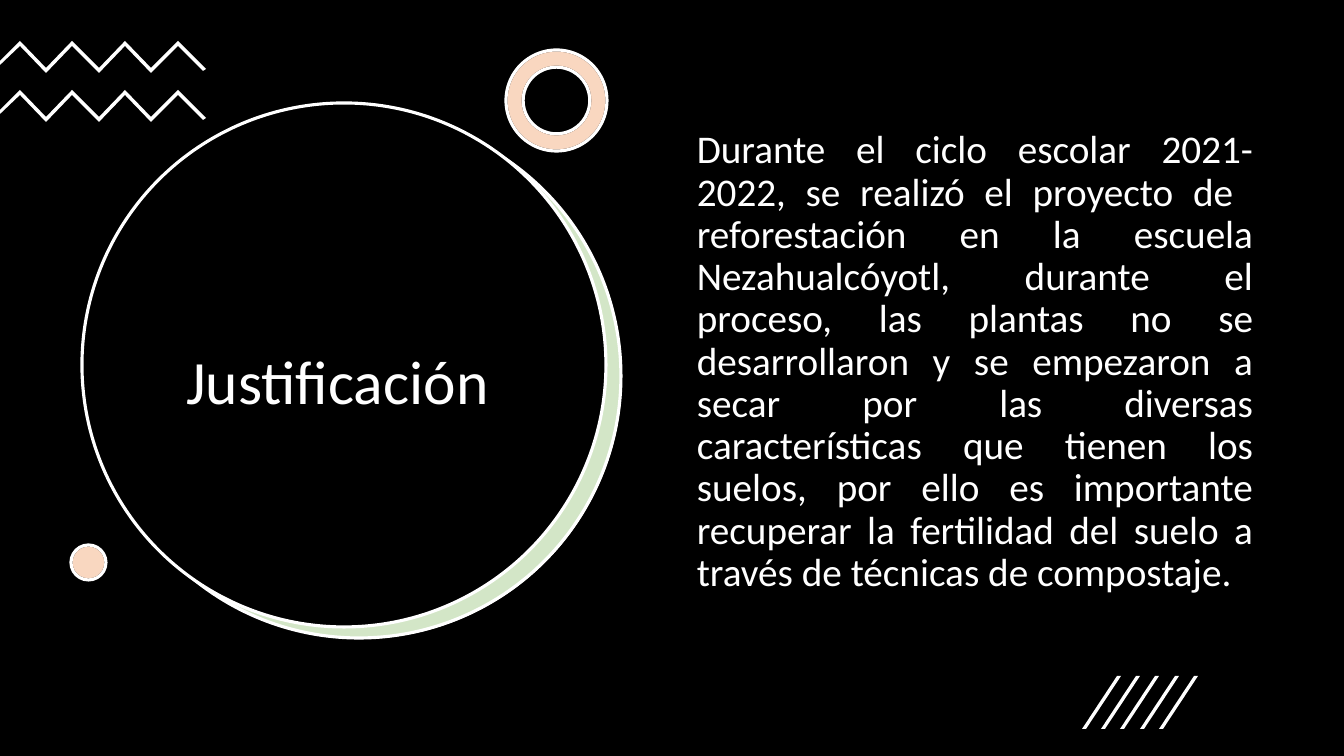
from lxml.etree import SubElement
from pptx import Presentation
from pptx.dml.color import RGBColor
from pptx.enum.shapes import MSO_SHAPE
from pptx.enum.text import MSO_ANCHOR, MSO_AUTO_SIZE, PP_ALIGN
from pptx.oxml.ns import qn
from pptx.util import Emu, Pt

COLORS = {"black": "000000", "white": "FFFFFF", "green": "70AD47", "orange": "ED7D31"}
EMU_PER_PX = 914400 / 100.8
WIDTH, HEIGHT = 1344, 756


def px(length):
    """Turn pixels into EMU."""
    return Emu(round(length * EMU_PER_PX))


class SlidePainter:
    """Hold the style and the current slide."""

    font = "Calibri"
    outline = Pt(2.25)
    line_spacing = 0.9

    def __init__(self, slide):
        """Keep the slide to draw on."""
        self.slide = slide

    def paint(self, shape, fill, line=None, opacity=None):
        """Set the fill, the outline and the opacity of a shape."""
        shape.shadow.inherit = False
        shape.fill.solid()
        shape.fill.fore_color.rgb = RGBColor.from_string(COLORS[fill])
        if opacity:
            color = shape.fill._xPr.find(qn("a:solidFill"))[0]
            SubElement(color, qn("a:alpha"), val=str(opacity * 1000))
        if line:
            shape.line.color.rgb = RGBColor.from_string(COLORS[line])
            shape.line.width = self.outline
        else:
            shape.line.fill.background()

    def preset(self, kind, bounds, fill, line=None, opacity=None, adjustment=None):
        """Add a preset shape."""
        shape = self.slide.shapes.add_shape(kind, *map(px, bounds))
        if adjustment:
            shape.adjustments[0] = adjustment
        self.paint(shape, fill, line, opacity)

    def tinted(self, kind, bounds, tint, adjustment=None):
        """Add a white shape under a translucent one."""
        self.preset(kind, bounds, "white", "black", adjustment=adjustment)
        self.preset(kind, bounds, tint, "white", 30, adjustment)

    def outlines(self, polygons):
        """Add a group of white polygons."""
        group = self.slide.shapes.add_group_shape()
        for start, *rest in polygons:
            builder = group.shapes.build_freeform(*start, scale=EMU_PER_PX)
            builder.add_line_segments(rest, close=True)
            self.paint(builder.convert_to_shape(), "white")

    def text(self, bounds, words, size, align, anchor, space_before=0):
        """Add a text box with one paragraph."""
        box = self.slide.shapes.add_textbox(*map(px, bounds))
        frame = box.text_frame
        frame.word_wrap = True
        frame.auto_size = MSO_AUTO_SIZE.TEXT_TO_FIT_SHAPE
        frame.vertical_anchor = anchor
        para = frame.paragraphs[0]
        para.alignment = align
        para.line_spacing = self.line_spacing
        para.space_before = Pt(space_before)
        span = para.add_run()
        span.text = words
        span.font.name = self.font
        span.font.size = Pt(size)
        span.font.color.rgb = RGBColor.from_string(COLORS["white"])


def zigzag(top):
    """Return the corners of a zigzag band."""
    ridge = [(round(20 + 26.25 * step), top + 27 * (step % 2)) for step in range(7)]
    underside = [(x, y + 5) for x, y in reversed(ridge)]
    tip = [(206, top + 28), (203, top + 30)]
    return ridge + tip + underside + [(0, top + 24), (0, top + 20)]


def slash(left):
    """Return the corners of a slanted stroke."""
    return [(left + 4, 729), (left, 729), (left + 35, 676), (left + 39, 676)]


def main():
    """Build and save the slide."""
    deck = Presentation()
    deck.slide_width, deck.slide_height = px(WIDTH), px(HEIGHT)
    page = SlidePainter(deck.slides.add_slide(deck.slide_layouts[6]))

    page.preset(MSO_SHAPE.RECTANGLE, (0, 0, WIDTH, HEIGHT), "black")
    page.preset(MSO_SHAPE.OVAL, (98, 115, 524, 524), "white")
    page.preset(MSO_SHAPE.OVAL, (97, 114, 524, 524), "green", "white", 30)
    page.preset(MSO_SHAPE.OVAL, (82, 103, 524, 524), "black", "white")
    page.text((122, 207, 445, 355), "Justificación ", 44,
              PP_ALIGN.CENTER, MSO_ANCHOR.MIDDLE)

    page.outlines(zigzag(top) for top in (41, 90))
    page.tinted(MSO_SHAPE.DONUT, (506, 50, 101, 101), "orange", 0.17)
    page.tinted(MSO_SHAPE.OVAL, (71, 545, 35, 35), "orange")

    page.text(
        (687, 125, 576, 480),
        "Durante el ciclo escolar 2021-2022, se realizó el proyecto de  "
        "reforestación en la escuela Nezahualcóyotl, durante el proceso, las "
        "plantas no se desarrollaron y se empezaron a secar por las diversas "
        "características que tienen los suelos, por ello es importante recuperar "
        "la fertilidad del suelo a través de técnicas de compostaje. ",
        28, PP_ALIGN.JUSTIFY, MSO_ANCHOR.TOP, 10)
    page.outlines(slash(round(1082 + 19.25 * step)) for step in range(5))

    deck.save("out.pptx")


if __name__ == "__main__":
    main()
